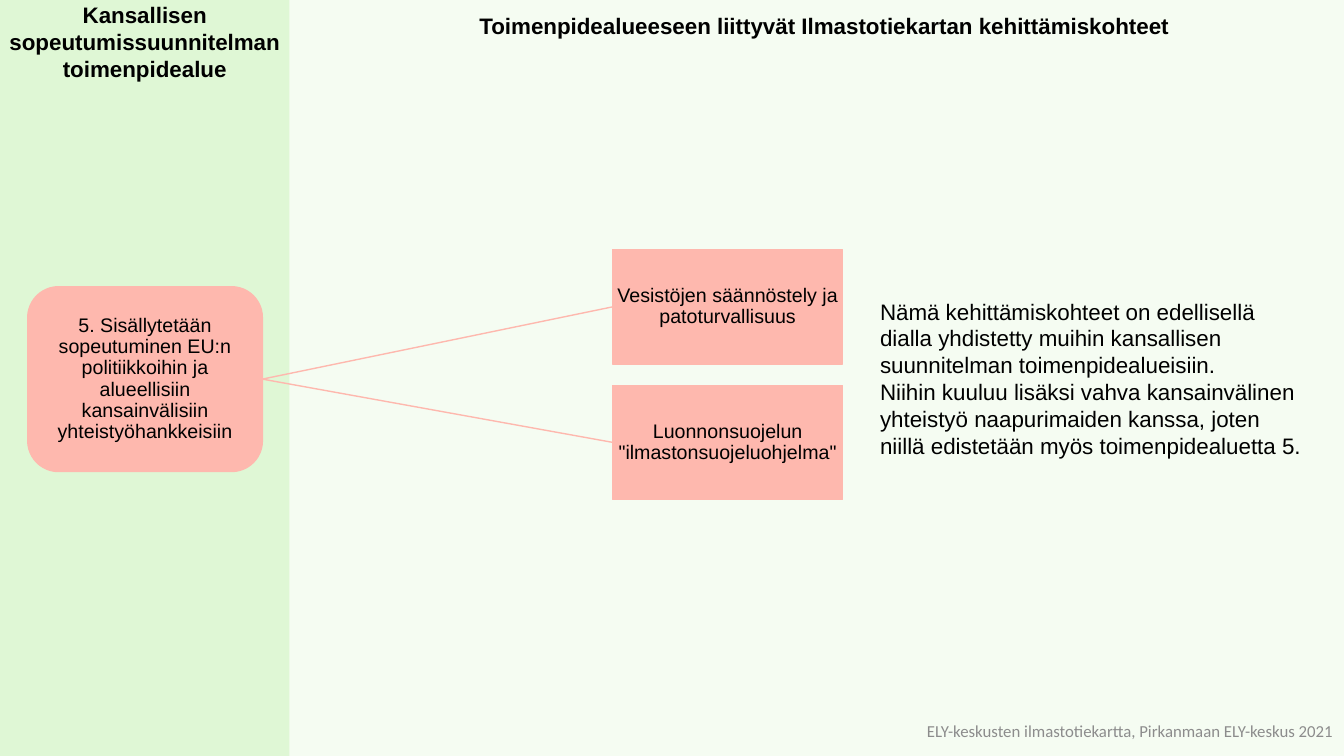
from lxml import etree
from pptx import Presentation
from pptx.dml.color import RGBColor
from pptx.enum.shapes import MSO_CONNECTOR, MSO_SHAPE
from pptx.enum.text import MSO_ANCHOR, MSO_AUTO_SIZE, PP_ALIGN
from pptx.oxml.ns import qn
from pptx.util import Pt

GREEN = "DFF7D5"
PINK = "FEB8AE"
BLACK = "000000"
GREY = "8C8C8C"


def colour(value):
    return RGBColor.from_string(value)


class SlideBuilder:
    font = "Arial"
    line_width = 1

    def __init__(self, page):
        self.page = page

    def set_text(self, box, paragraphs, size, align, anchor, bold=False,
                 ink=BLACK, font=None, inset=0, spacing=None):
        frame = box.text_frame
        frame.word_wrap = True
        frame.auto_size = MSO_AUTO_SIZE.NONE
        frame.vertical_anchor = anchor
        frame.margin_left = frame.margin_right = Pt(inset)
        frame.margin_top = frame.margin_bottom = Pt(inset)
        frame.text = "\n".join(paragraphs)
        for para in frame.paragraphs:
            para.alignment = align
            para.line_spacing = spacing
            para.font.name = font or self.font
            para.font.size = Pt(size)
            para.font.bold = bold
            para.font.color.rgb = colour(ink)

    def shape(self, kind, place, fill):
        box = self.page.shapes.add_shape(kind, *map(Pt, place))
        box.shadow.inherit = False
        box.fill.solid()
        box.fill.fore_color.rgb = colour(fill)
        box.line.fill.background()
        return box

    def band(self, place, opacity=100):
        box = self.shape(MSO_SHAPE.RECTANGLE, place, GREEN)
        if opacity < 100:
            tone = box._element.spPr.find(qn("a:solidFill"))[0]
            etree.SubElement(tone, qn("a:alpha"), val=str(opacity * 1000))

    def node(self, kind, place, text):
        box = self.shape(kind, place, PINK)
        box.line.color.rgb = colour(PINK)
        box.line.width = Pt(self.line_width)
        self.set_text(box, [text], 14, PP_ALIGN.CENTER, MSO_ANCHOR.MIDDLE,
                      inset=1, spacing=0.9)

    def link(self, start, end):
        line = self.page.shapes.add_connector(
            MSO_CONNECTOR.STRAIGHT, *map(Pt, start + end))
        line.line.color.rgb = colour(PINK)
        line.line.width = Pt(self.line_width)
        etree.SubElement(line._element.spPr, qn("a:effectLst"))

    def title(self, place, text):
        box = self.page.shapes.title
        box.left, box.top, box.width, box.height = map(Pt, place)
        self.set_text(box, [text], 16, PP_ALIGN.LEFT, MSO_ANCHOR.TOP, bold=True)
        box._element.getparent().append(box._element)

    def text(self, place, paragraphs, size=16, align=PP_ALIGN.LEFT,
             anchor=MSO_ANCHOR.TOP, **style):
        box = self.page.shapes.add_textbox(*map(Pt, place))
        self.set_text(box, paragraphs, size, align, anchor, **style)


def main():
    deck = Presentation()
    deck.slide_width, deck.slide_height = Pt(960), Pt(540)
    page = deck.slides.add_slide(deck.slide_layouts[5])
    builder = SlideBuilder(page)

    builder.band((0, -4, 960, 544), opacity=30)
    builder.band((0, 0, 206.8, 541.5))

    area_left, area_top, area_width, area_height = 19.8, 204.8, 167.6, 132
    target_left, target_top, target_width, target_height = 437.6, 178.4, 164.4, 81.6
    target_step = 96.8
    targets = ["Vesistöjen säännöstely ja patoturvallisuus",
               'Luonnonsuojelun "ilmastonsuojeluohjelma"']
    tops = [target_top + index * target_step for index in range(len(targets))]

    hub = (area_left + area_width, area_top + area_height / 2)
    for top in tops:
        builder.link(hub, (target_left, top + target_height / 2))
    builder.node(
        MSO_SHAPE.ROUNDED_RECTANGLE,
        (area_left, area_top, area_width, area_height),
        "5. Sisällytetään sopeutuminen EU:n politiikkoihin ja alueellisiin "
        "kansainvälisiin yhteistyöhankkeisiin")
    for top, target in zip(tops, targets):
        builder.node(MSO_SHAPE.RECTANGLE,
                     (target_left, top, target_width, target_height), target)

    builder.text((0, 1, 206.8, 58),
                 ["Kansallisen sopeutumissuunnitelman toimenpidealue"],
                 align=PP_ALIGN.CENTER, bold=True)
    builder.title((342.4, 8.6, 572.4, 19.4),
                  "Toimenpidealueeseen liittyvät Ilmastotiekartan kehittämiskohteet")
    builder.text((628.6, 212.6, 304.6, 116.6), [
        "Nämä kehittämiskohteet on edellisellä dialla yhdistetty muihin "
        "kansallisen suunnitelman toimenpidealueisiin.",
        "Niihin kuuluu lisäksi vahva kansainvälinen yhteistyö naapurimaiden "
        "kanssa, joten niillä edistetään myös toimenpidealuetta 5."])
    builder.text((590.4, 514.8, 362, 15),
                 ["ELY-keskusten ilmastotiekartta, Pirkanmaan ELY-keskus 2021"],
                 size=12, align=PP_ALIGN.RIGHT, anchor=MSO_ANCHOR.MIDDLE,
                 ink=GREY, font="Calibri")
    deck.save("out.pptx")


if __name__ == "__main__":
    main()
